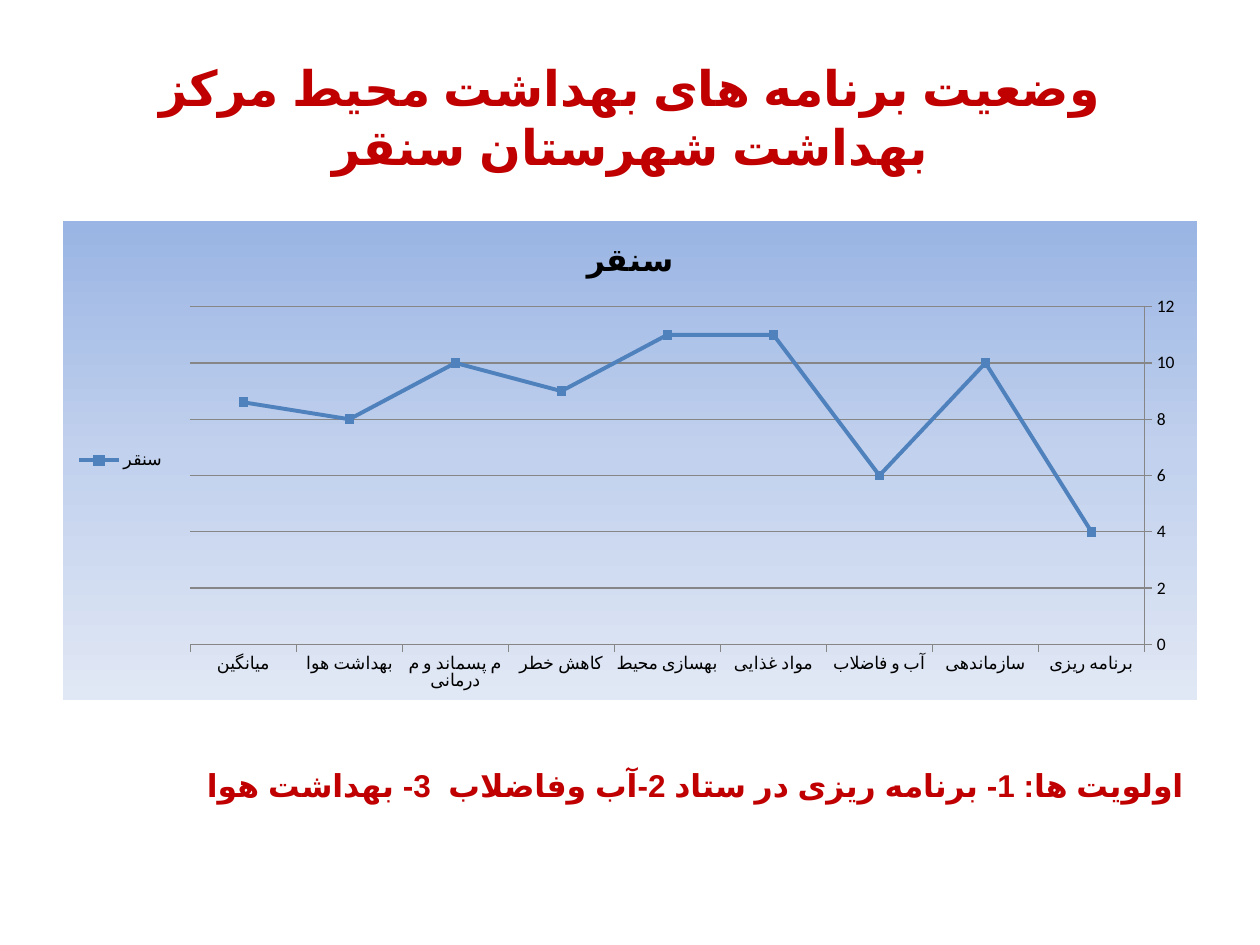
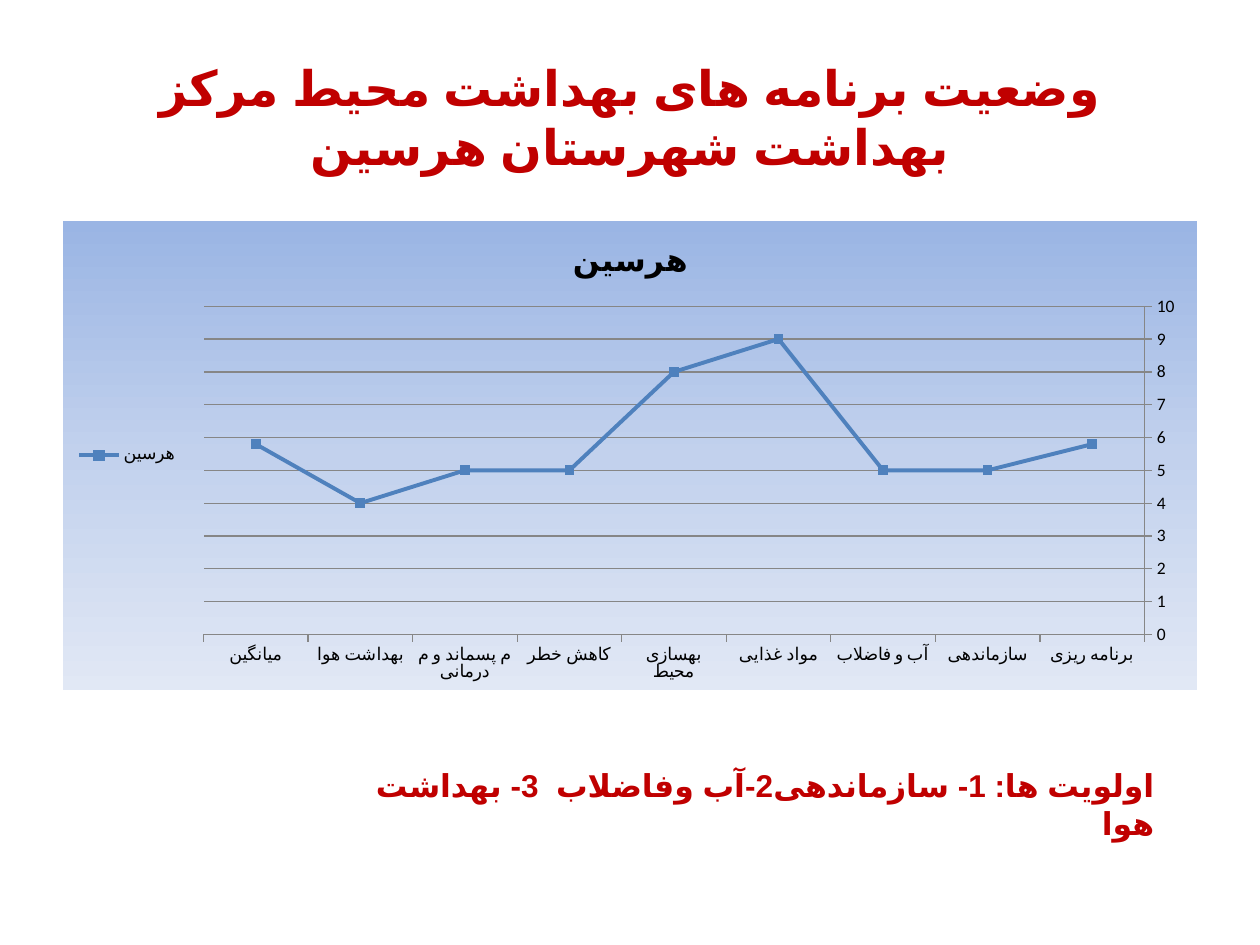
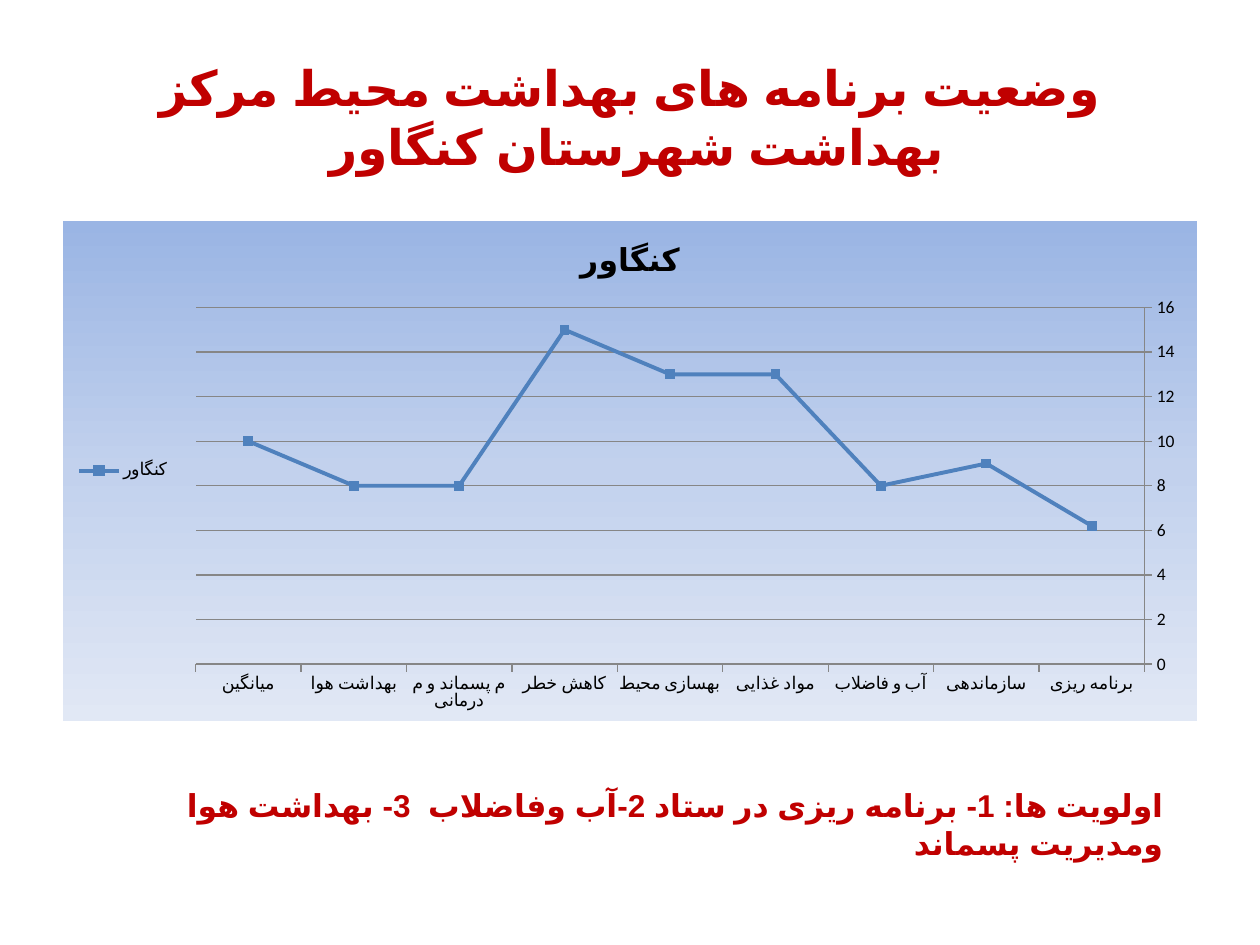
from dataclasses import dataclass
from lxml.etree import SubElement
from pptx import Presentation
from pptx.chart.data import CategoryChartData
from pptx.dml.color import RGBColor
from pptx.enum.chart import XL_CHART_TYPE, XL_LEGEND_POSITION, XL_MARKER_STYLE, XL_TICK_MARK
from pptx.enum.lang import MSO_LANGUAGE_ID
from pptx.enum.text import MSO_ANCHOR, MSO_AUTO_SIZE, PP_ALIGN
from pptx.oxml import parse_xml
from pptx.oxml.ns import nsdecls, qn
from pptx.util import Emu, Pt

SCALE = 9144


@dataclass(frozen=True)
class Theme:
    face: str = "Calibri"
    script: str = "Arial"
    red: str = "C00000"
    ink: str = "000000"
    blue: str = "4F81BD"
    grid: str = "868686"
    fade: tuple = ((0, "9AB5E4"), (50, "C2D1ED"), (100, "E1E8F5"))
    head: int = 28
    note: int = 18
    label: int = 10


def px(*sizes):
    return [Emu(size * SCALE) for size in sizes]


class Deck:
    def __init__(self, theme):
        self.theme = theme
        self.file = Presentation()
        self.file.slide_width, self.file.slide_height = px(1000, 750)
        self.slide = None

    def page(self):
        self.slide = self.file.slides.add_slide(self.file.slide_layouts[6])

    def style(self, font, size, color, bold=False):
        font.name = self.theme.face
        font.size = Pt(size)
        font.bold = bold
        font.color.rgb = RGBColor.from_string(color)

    def text(self, words, box, size, align):
        frame = self.slide.shapes.add_textbox(*px(*box)).text_frame
        frame.word_wrap = True
        para = frame.paragraphs[0]
        para.text = words
        para.alignment = align
        self.style(para.font, size, self.theme.red, True)
        para.font.language_id = MSO_LANGUAGE_ID.FARSI
        para.runs[0].font.language_id = MSO_LANGUAGE_ID.FARSI
        props = para._p.get_or_add_pPr()
        props.set("rtl", "1")
        SubElement(props.find(qn("a:defRPr")), qn("a:cs"), typeface=self.theme.script)
        return frame

    def title(self, words):
        frame = self.text(words, (50, 30, 900, 125), self.theme.head, PP_ALIGN.CENTER)
        frame.vertical_anchor = MSO_ANCHOR.MIDDLE

    def note(self, words, left, top, width):
        frame = self.text(words, (left, top, width, 40), self.theme.note, PP_ALIGN.RIGHT)
        frame.auto_size = MSO_AUTO_SIZE.SHAPE_TO_FIT_TEXT

    def stroke(self, line, color, width):
        line.color.rgb = RGBColor.from_string(color)
        line.width = Pt(width)

    def chart(self, name, labels, values, height):
        data = CategoryChartData()
        data.categories = labels
        data.add_series(name, values)
        chart = self.slide.shapes.add_chart(
            XL_CHART_TYPE.LINE_MARKERS_STACKED, *px(50, 175, 900, height), data).chart
        self.style(chart.font, self.theme.label, self.theme.ink)
        self.back(chart)
        chart.has_title = True
        para = chart.chart_title.text_frame.paragraphs[0]
        para.text = name
        self.style(para.font, self.theme.note, self.theme.ink, True)
        chart.chart_title.include_in_layout = False
        chart.has_legend = True
        chart.legend.position = XL_LEGEND_POSITION.LEFT
        chart.legend.include_in_layout = False
        chart.category_axis.reverse_order = True
        for axis in (chart.category_axis, chart.value_axis):
            axis.major_tick_mark = XL_TICK_MARK.OUTSIDE
            self.stroke(axis.format.line, self.theme.grid, 0.75)
        self.stroke(chart.value_axis.major_gridlines.format.line, self.theme.grid, 0.75)
        plot = chart.plots[0]
        plot.vary_by_categories = False
        line = plot.series[0]
        line.smooth = False
        self.stroke(line.format.line, self.theme.blue, 2.25)
        mark = line.marker
        mark.style = XL_MARKER_STYLE.SQUARE
        mark.size = 5
        mark.format.fill.solid()
        mark.format.fill.fore_color.rgb = RGBColor.from_string(self.theme.blue)
        mark.format.line.fill.background()

    def back(self, chart):
        area = parse_xml(f"<c:spPr {nsdecls('c', 'a')}/>")
        grad = SubElement(area, qn("a:gradFill"))
        stops = SubElement(grad, qn("a:gsLst"))
        for place, color in self.theme.fade:
            stop = SubElement(stops, qn("a:gs"), pos=str(place * 1000))
            SubElement(stop, qn("a:srgbClr"), val=color)
        SubElement(grad, qn("a:lin"), ang="5400000", scaled="0")
        SubElement(SubElement(area, qn("a:ln")), qn("a:noFill"))
        chart._chartSpace.find(qn("c:txPr")).addprevious(area)


LABELS = ("برنامه ریزی", "سازماندهی", "آب و فاضلاب", "مواد غذایی", "بهسازی محیط",
          "کاهش خطر", "م پسماند و م درمانی", "بهداشت هوا", "میانگین")
HEAD = "وضعیت برنامه های بهداشت محیط مرکز بهداشت شهرستان "
TOWNS = (
    ("سنقر", "", (4, 10, 6, 11, 11, 9, 10, 8, 8.6), 381,
     "اولویت ها: 1- برنامه ریزی در ستاد 2-آب وفاضلاب  3- بهداشت هوا ", (67, 603, 882)),
    ("هرسین", "", (5.8, 5, 5, 9, 8, 5, 5, 4, 5.8), 373,
     "اولویت ها: 1- سازماندهی2-آب وفاضلاب  3- بهداشت هوا ", (280, 603, 646)),
    ("کنگاور", " ", (6.2, 9, 8, 13, 13, 15, 8, 8, 10), 397,
     "اولویت ها: 1- برنامه ریزی در ستاد 2-آب وفاضلاب  3- بهداشت هوا ومدیریت پسماند ",
     (67, 619, 866)),
)


def main():
    deck = Deck(Theme())
    for name, tail, values, height, words, spot in TOWNS:
        deck.page()
        deck.title(HEAD + name + tail)
        deck.chart(name, LABELS, values, height)
        deck.note(words, *spot)
    deck.file.save("out.pptx")


if __name__ == "__main__":
    main()
